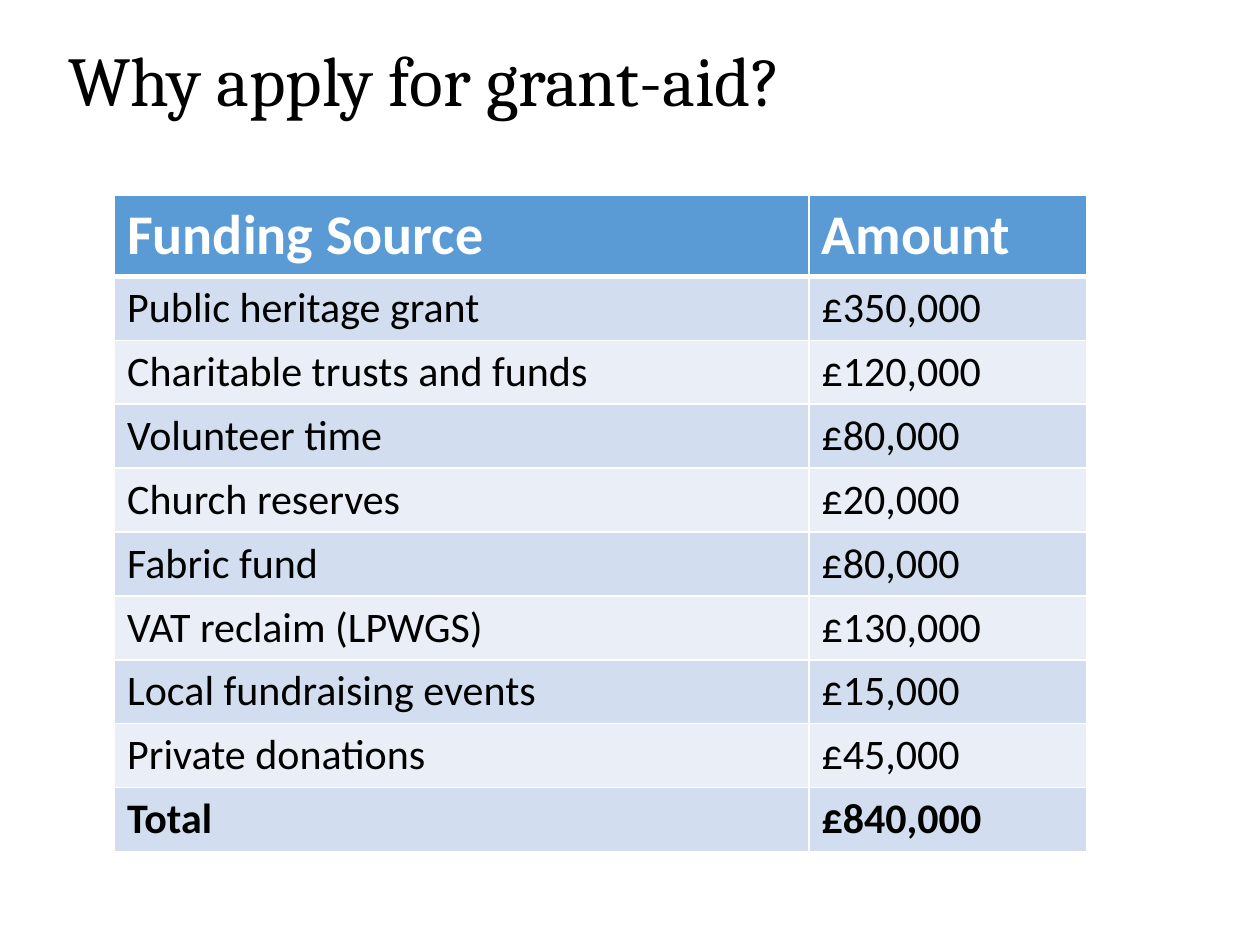
from lxml import etree
from pptx import Presentation
from pptx.dml.color import RGBColor
from pptx.enum.text import MSO_ANCHOR, PP_ALIGN
from pptx.oxml.ns import qn
from pptx.util import Pt

LEFT = PP_ALIGN.LEFT
MIDDLE = MSO_ANCHOR.MIDDLE

BLACK = RGBColor(0x00, 0x00, 0x00)
WHITE = RGBColor(0xFF, 0xFF, 0xFF)
HEADER_BLUE = RGBColor(0x5B, 0x9B, 0xD5)
BANDS = (RGBColor(0xEA, 0xEF, 0xF7), RGBColor(0xD2, 0xDE, 0xEF))

HEADING = "Why apply for grant-aid?"
FUNDING = [
    ("Funding Source", "Amount"),
    ("Public heritage grant", "£350,000"),
    ("Charitable trusts and funds", "£120,000"),
    ("Volunteer time", "£80,000"),
    ("Church reserves", "£20,000"),
    ("Fabric fund", "£80,000"),
    ("VAT reclaim (LPWGS)", "£130,000"),
    ("Local fundraising events", "£15,000"),
    ("Private donations", "£45,000"),
    ("Total", "£840,000"),
]
COLUMN_WIDTHS = (396.8, 158.6)
HEADER_HEIGHT, ROW_HEIGHT = 45, 36
LAST = len(FUNDING) - 1

TITLE_FONT = {"name": "Cambria", "size": Pt(40), "bold": False}
HEADER_FONT = {"name": "Calibri", "size": Pt(32), "bold": True}
BODY_FONT = {"name": "Calibri", "size": Pt(24), "bold": False}
TOTAL_FONT = {**BODY_FONT, "bold": True}


def set_font(font, formats, color):
    for attribute, value in formats.items():
        setattr(font, attribute, value)
    font.color.rgb = color


def add_borders(cell, widths):
    properties = cell._tc.get_or_add_tcPr()
    for side, width in widths.items():
        border = etree.SubElement(properties, qn(f"a:ln{side}"), w=str(Pt(width)))
        fill = etree.SubElement(border, qn("a:solidFill"))
        etree.SubElement(fill, qn("a:srgbClr"), val=str(WHITE))


def row_style(row):
    if row == 0:
        return HEADER_FONT, WHITE, HEADER_BLUE
    return (TOTAL_FONT if row == LAST else BODY_FONT), BLACK, BANDS[row % 2]


def main():
    deck = Presentation()
    deck.slide_width, deck.slide_height = Pt(720), Pt(540)
    slide = deck.slides.add_slide(deck.slide_layouts[5])

    title = slide.shapes.title
    title.left, title.top, title.width, title.height = Pt(31.7), Pt(17.3), Pt(686), Pt(55.4)
    title.text_frame.text = HEADING
    title.text_frame.vertical_anchor = MIDDLE
    heading = title.text_frame.paragraphs[0]
    heading.alignment = LEFT
    set_font(heading.runs[0].font, TITLE_FONT, BLACK)

    table = slide.shapes.add_table(
        len(FUNDING), len(COLUMN_WIDTHS), Pt(65.5), Pt(111.6),
        Pt(sum(COLUMN_WIDTHS)), Pt(HEADER_HEIGHT + LAST * ROW_HEIGHT),
    ).table
    for column, width in zip(table.columns, COLUMN_WIDTHS):
        column.width = Pt(width)

    for row, entries in enumerate(FUNDING):
        table.rows[row].height = Pt(ROW_HEIGHT if row else HEADER_HEIGHT)
        formats, text_color, background = row_style(row)
        borders = {"L": 1, "R": 1, "T": 3 if row == 1 else 1, "B": 1 if row else 3}
        for column, entry in enumerate(entries):
            cell = table.cell(row, column)
            cell.text = entry
            add_borders(cell, borders)
            cell.fill.solid()
            cell.fill.fore_color.rgb = background
            set_font(cell.text_frame.paragraphs[0].runs[0].font, formats, text_color)

    deck.save("out.pptx")


if __name__ == "__main__":
    main()
